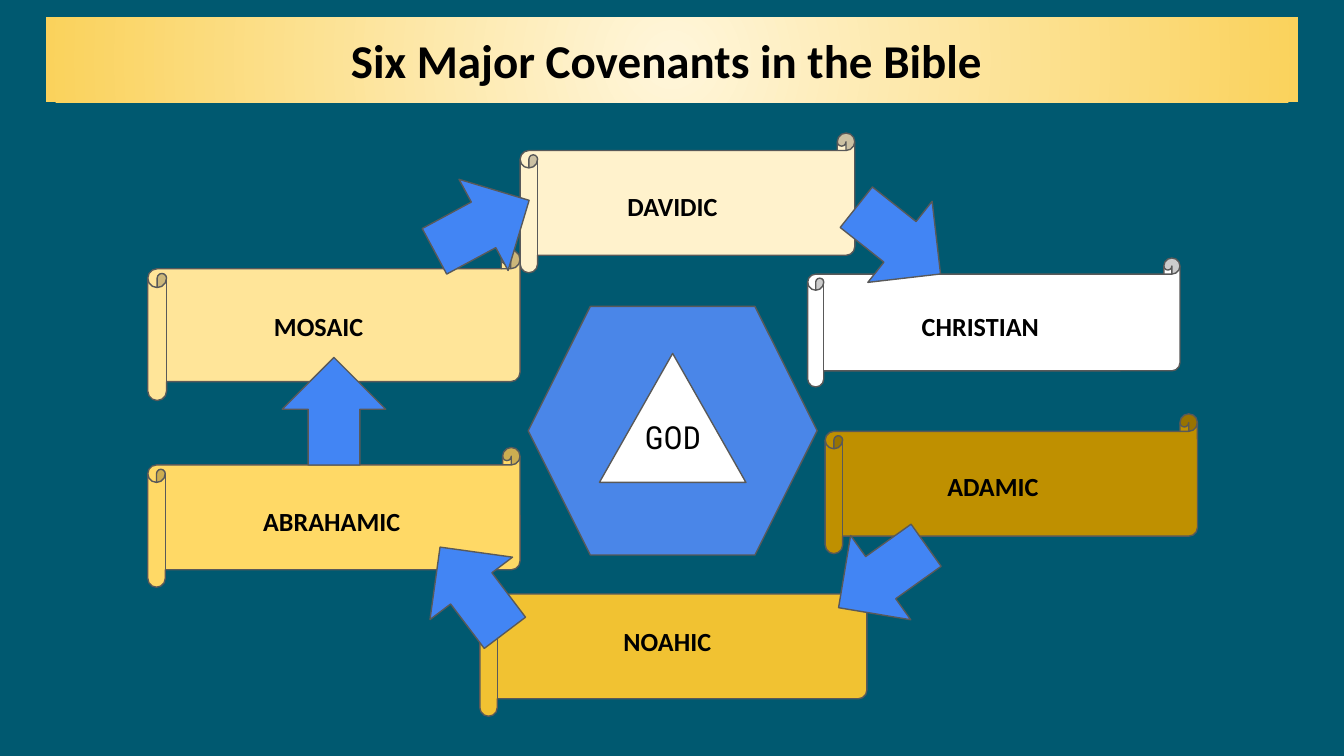
import pptx
import pptx.util
import pptx.dml.color
import pptx.enum.shapes
import pptx.enum.text
import pptx.oxml
import pptx.oxml.ns
from dataclasses import dataclass

Inches = pptx.util.Inches
Pt = pptx.util.Pt
Kind = pptx.enum.shapes.MSO_SHAPE
Anchor = pptx.enum.text.MSO_ANCHOR
Align = pptx.enum.text.PP_ALIGN


@dataclass(frozen=True)
class Theme:
    back: str = "005970"
    glow: str = "FFF6DB"
    gold: str = "FAD25C"
    ink: str = "000000"
    edge: str = "595959"
    core: str = "4A86E8"
    arrow: str = "4285F4"
    white: str = "FFFFFF"
    font: str = "Calibri"
    thin: str = "Roboto Condensed"
    head: float = 25.2
    label: float = 14
    name: float = 17
    line: float = 0.75


THEME = Theme()

SCROLLS = [
    ("CHRISTIAN", (6.01, 1.92, 2.77, 0.96), "FFFFFF", (0.75, 0.29)),
    ("ADAMIC", (6.14, 3.08, 2.77, 1.04), "BF9000", (0.81, 0.32)),
    ("NOAHIC", (3.57, 4.29, 2.88, 1.04), "F1C232", (0.97, 0.26)),
    ("DAVIDIC", (3.87, 0.99, 2.49, 1.04), "FFF2CC", (0.7, 0.33)),
    ("MOSAIC", (1.1, 1.86, 2.77, 1.12), "FFE599", (0.84, 0.35)),
    ("ABRAHAMIC", (1.1, 3.33, 2.77, 1.04), "FFD966", (0.76, 0.33)),
]

ARROWS = [
    (6.18, 3.89, 54.5),
    (3.13, 3.99, 142.9),
    (2.1, 2.66, 180),
    (3.2, 1.28, 241.7),
    (6.3, 1.39, 308.4),
]


def color(code):
    return pptx.dml.color.RGBColor.from_string(code)


def place(box):
    return [Inches(v) for v in box]


def shape(slide, kind, box, fill):
    item = slide.shapes.add_shape(kind, *place(box))
    item.shadow.inherit = False
    item.fill.solid()
    item.fill.fore_color.rgb = color(fill)
    item.line.color.rgb = color(THEME.edge)
    item.line.width = Pt(THEME.line)
    return item


def write(item, text, size, font, bold):
    frame = item.text_frame
    frame.word_wrap = True
    frame.margin_left = frame.margin_right = Inches(0.1)
    frame.margin_top = frame.margin_bottom = Inches(0.1)
    frame.text = text
    style = frame.paragraphs[0].runs[0].font
    style.size = Pt(size)
    style.name = font
    style.bold = bold
    style.color.rgb = color(THEME.ink)
    return frame


def label(slide, text, box, size=THEME.label, font=THEME.font, bold=True):
    item = slide.shapes.add_textbox(*place(box))
    write(item, text, size, font, bold).vertical_anchor = Anchor.TOP


def banner(slide, box):
    item = shape(slide, Kind.RECTANGLE, box, THEME.gold)
    item.line.fill.background()
    item.fill.gradient()
    for stop, code in zip(item.fill.gradient_stops, (THEME.glow, THEME.gold)):
        stop.color.rgb = color(code)
    grad = item._element.spPr.find(pptx.oxml.ns.qn("a:gradFill"))
    radial = pptx.oxml.parse_xml(
        f'<a:path {pptx.oxml.ns.nsdecls("a")} path="circle">'
        '<a:fillToRect l="50000" t="50000" r="50000" b="50000"/></a:path>'
    )
    grad.replace(grad.find(pptx.oxml.ns.qn("a:lin")), radial)
    frame = write(item, "Six Major Covenants in the Bible", THEME.head, THEME.font, True)
    frame.margin_right = Inches(0.18)
    frame.vertical_anchor = Anchor.MIDDLE
    frame.paragraphs[0].alignment = Align.CENTER


def center(slide, box):
    x, y, w, h = box
    hexa = shape(slide, Kind.HEXAGON, box, THEME.core)
    hexa.adjustments[0] = 0.25
    shape(slide, Kind.ISOSCELES_TRIANGLE, (x + 0.53, y + 0.35, 1.09, 0.96), THEME.white)
    label(slide, "GOD", (x + 0.77, y + 0.73, 0.95, 0.2), THEME.name, THEME.thin, False)


def scroll(slide, text, box, fill, shift):
    x, y, w, h = box
    shape(slide, Kind.HORIZONTAL_SCROLL, box, fill)
    label(slide, text, (x + shift[0], y + shift[1], 1.46, 0.38))


def arrow(slide, box, turn):
    item = shape(slide, Kind.DOWN_ARROW, box, THEME.arrow)
    item.rotation = turn


def main():
    deck = pptx.Presentation()
    deck.slide_width = Inches(10)
    deck.slide_height = Inches(10 * 9 / 16)
    slide = deck.slides.add_slide(deck.slide_layouts[6])
    slide.background.fill.solid()
    slide.background.fill.fore_color.rgb = color(THEME.back)
    banner(slide, (0.34, 0.13, 9.32, 0.63))
    center(slide, (3.93, 2.28, 2.15, 1.85))
    for text, box, fill, shift in SCROLLS:
        scroll(slide, text, box, fill, shift)
    for x, y, turn in ARROWS:
        arrow(slide, (x, y, 0.77, 0.8), turn)
    deck.save("out.pptx")


if __name__ == "__main__":
    main()
